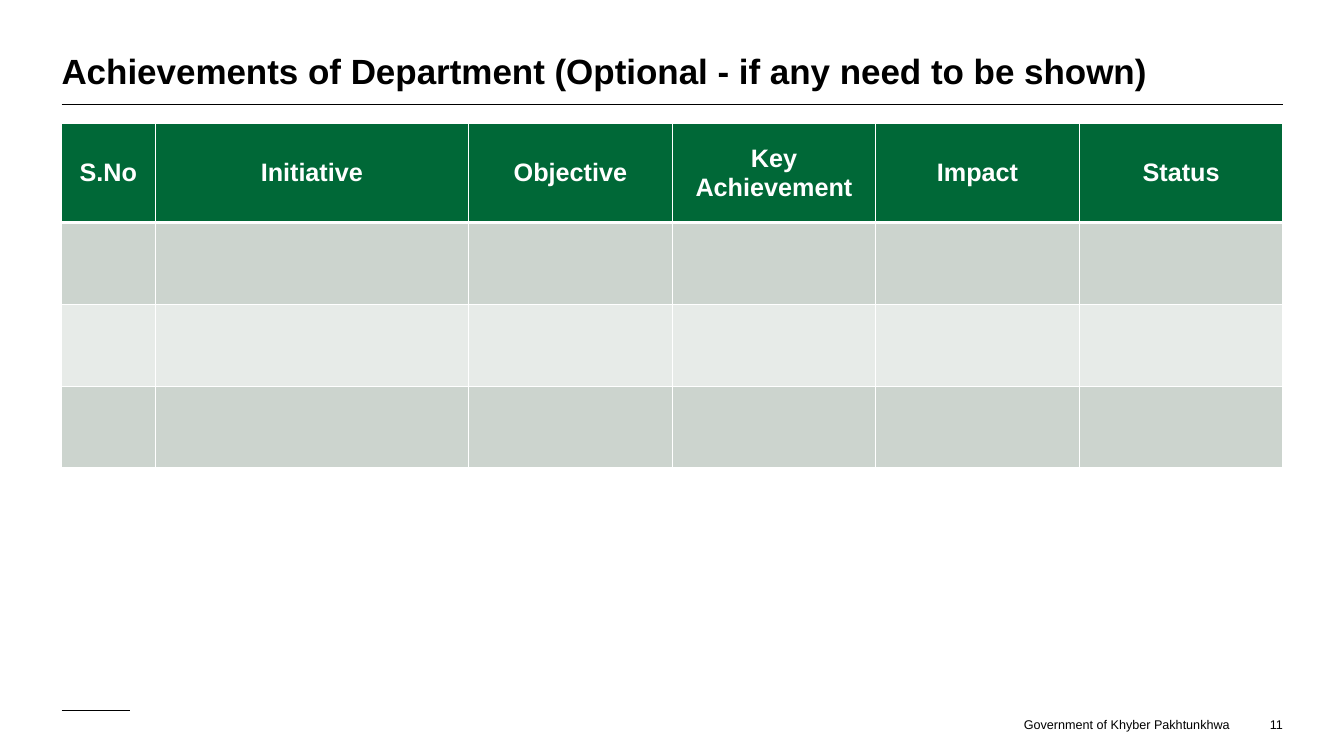
from lxml.etree import SubElement
from pptx import Presentation
from pptx.dml.color import RGBColor
from pptx.enum.shapes import MSO_CONNECTOR
from pptx.enum.text import MSO_ANCHOR, MSO_AUTO_SIZE, PP_ALIGN
from pptx.oxml.ns import qn
from pptx.util import Cm, Pt

TITLE = "Achievements of Department (Optional - if any need to be shown)"
HEADINGS = ["S.No", "Initiative", "Objective", "Key Achievement", "Impact", "Status"]
FOOTER = "Government of Khyber Pakhtunkhwa"
PAGE_NUMBER = "11"

COLORS = {
    "ink": "000000",
    "white": "FFFFFF",
    "header": "006837",
    "band_dark": "CCD4CE",
    "band_light": "E7EBE8",
}
FONT = "Arial"
LEFT, RIGHT = 1.55, 32.33
COLUMN_WIDTHS = [2.36, 7.9] + [5.13] * 4
ROW_HEIGHTS = [2.49] + [2.06] * 3
RULES = [(RIGHT, 2.62), (3.28, 17.91)]
FOOTER_TOP, FOOTER_HEIGHT = 18.06, 0.38


def color(name):
    return RGBColor.from_string(COLORS[name])


def write(frame, text, size, ink="ink", bold=False, align=PP_ALIGN.LEFT):
    frame.text = text
    paragraph = frame.paragraphs[0]
    paragraph.alignment = align
    for run in paragraph.runs:
        run.font.name = FONT
        run.font.size = Pt(size)
        run.font.bold = bold
        run.font.color.rgb = color(ink)


def clear_margins(frame):
    frame.margin_left = frame.margin_right = 0
    frame.margin_top = frame.margin_bottom = 0


def add_rule(slide, right, y):
    rule = slide.shapes.add_connector(
        MSO_CONNECTOR.STRAIGHT, Cm(LEFT), Cm(y), Cm(right), Cm(y)
    )
    rule.line.color.rgb = color("ink")
    rule.line.width = Pt(0.5)
    SubElement(rule._element.spPr, qn("a:effectLst"))


def add_footer(slide, text, left, width, align, anchor):
    box = slide.shapes.add_textbox(
        Cm(left), Cm(FOOTER_TOP), Cm(width), Cm(FOOTER_HEIGHT)
    )
    frame = box.text_frame
    clear_margins(frame)
    frame.word_wrap = False
    frame.vertical_anchor = anchor
    write(frame, text, 9, align=align)


def set_borders(cell, widths):
    properties = cell._tc.get_or_add_tcPr()
    for side, width in widths.items():
        border = SubElement(properties, qn(f"a:ln{side}"), w=str(Pt(width)))
        fill = SubElement(border, qn("a:solidFill"))
        SubElement(fill, qn("a:srgbClr"), val=COLORS["white"])


def add_achievements(slide):
    table = slide.shapes.add_table(
        len(ROW_HEIGHTS), len(COLUMN_WIDTHS), Cm(LEFT), Cm(3.12),
        Cm(sum(COLUMN_WIDTHS)), Cm(sum(ROW_HEIGHTS)),
    ).table
    for column, width in zip(table.columns, COLUMN_WIDTHS):
        column.width = Cm(width)
    for index, (row, height) in enumerate(zip(table.rows, ROW_HEIGHTS)):
        row.height = Cm(height)
        band = "header" if index == 0 else "band_dark" if index % 2 else "band_light"
        top, bottom = (3 if index == 1 else 1), (3 if index == 0 else 1)
        for cell in row.cells:
            set_borders(cell, {"L": 1, "R": 1, "T": top, "B": bottom})
            cell.fill.solid()
            cell.fill.fore_color.rgb = color(band)
            cell.vertical_anchor = MSO_ANCHOR.MIDDLE
    for cell, heading in zip(table.rows[0].cells, HEADINGS):
        write(cell.text_frame, heading, 18, "white", True, PP_ALIGN.CENTER)


def main():
    deck = Presentation()
    deck.slide_width, deck.slide_height = Cm(33.87), Cm(19.05)
    slide = deck.slides.add_slide(deck.slide_layouts[5])

    title = slide.shapes.title
    title.left, title.top = Cm(LEFT), Cm(0.28)
    title.width, title.height = Cm(28.22), Cm(2.03)
    clear_margins(title.text_frame)
    title.text_frame.auto_size = MSO_AUTO_SIZE.NONE
    title.text_frame.vertical_anchor = MSO_ANCHOR.BOTTOM
    write(title.text_frame, TITLE, 25, bold=True)

    for right, y in RULES:
        add_rule(slide, right, y)
    add_achievements(slide)
    add_footer(slide, FOOTER, 25.78, 5.23, PP_ALIGN.CENTER, MSO_ANCHOR.MIDDLE)
    add_footer(slide, PAGE_NUMBER, 31.42, 0.91, PP_ALIGN.RIGHT, MSO_ANCHOR.BOTTOM)
    deck.save("out.pptx")


if __name__ == "__main__":
    main()
